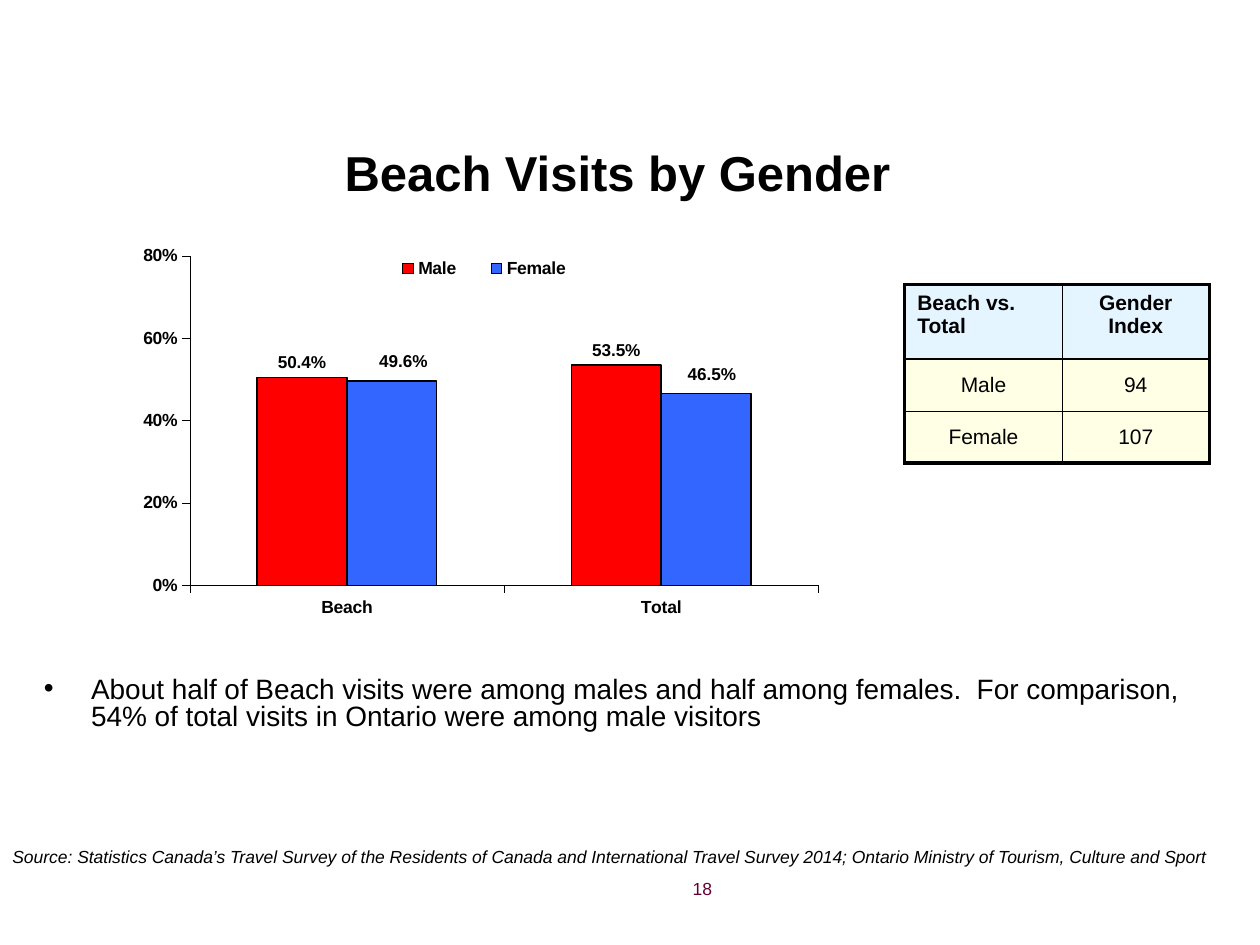
import pptx
import pptx.chart.data
import pptx.dml.color
import pptx.enum.chart
import pptx.enum.text
import pptx.oxml
import pptx.oxml.ns
import pptx.util

Pt = pptx.util.Pt
qn = pptx.oxml.ns.qn
ALIGN = pptx.enum.text.PP_ALIGN
FONT = "Arial"
COLORS = {
    "ink": "000000",
    "number": "660033",
    "male": "FF0000",
    "female": "3366FF",
    "header": "CCECFF",
    "body": "FFFFCC",
}


def rgb(name):
    return pptx.dml.color.RGBColor.from_string(COLORS[name])


def element(tag, **attrs):
    el = pptx.oxml.parse_xml(f"<{tag} {pptx.oxml.ns.nsdecls(tag.split(':')[0])}/>")
    for key, value in attrs.items():
        el.set(key, str(value))
    return el


def child(parent, tag, **attrs):
    el = element(tag, **attrs)
    parent.append(el)
    return el


def style_font(font, size, color="ink", bold=False, italic=False):
    font.name, font.size = FONT, Pt(size)
    font.bold, font.italic = bold, italic
    font.color.rgb = rgb(color)


def add_text(slide, box, text, size, align=ALIGN.LEFT, bullet=False, **style):
    tf = slide.shapes.add_textbox(*map(Pt, box)).text_frame
    tf.word_wrap = True
    p = tf.paragraphs[0]
    p.alignment = align
    if bullet:
        p.line_spacing = 0.8
        pPr = p._p.get_or_add_pPr()
        pPr.set("marL", str(Pt(27)))
        pPr.set("indent", str(Pt(-27)))
        child(pPr, "a:buFont", typeface=FONT)
        child(pPr, "a:buChar", char="•")
    r = p.add_run()
    r.text = text
    style_font(r.font, size, **style)


def manual_layout(**places):
    layout = element("c:layout")
    manual = child(layout, "c:manualLayout")
    for key, value in places.items():
        child(manual, f"c:{key}", val=value)
    return layout


def style_axis(axis):
    axis.has_major_gridlines = False
    axis.major_tick_mark = pptx.enum.chart.XL_TICK_MARK.OUTSIDE
    axis.minor_tick_mark = pptx.enum.chart.XL_TICK_MARK.NONE
    axis.format.line.width = Pt(0.19)
    axis.format.line.color.rgb = rgb("ink")
    style_font(axis.tick_labels.font, 10, bold=True)


def add_gender_chart(slide, box):
    data = pptx.chart.data.CategoryChartData(number_format="0.0%")
    data.categories = ["Beach", "Total"]
    data.add_series("Male", (0.504, 0.535))
    data.add_series("Female", (0.496, 0.465))
    kind = pptx.enum.chart.XL_CHART_TYPE.COLUMN_CLUSTERED
    chart = slide.shapes.add_chart(kind, *map(Pt, box), data).chart
    chart.has_title = False
    style_font(chart.font, 10, bold=True)

    # Axes
    style_axis(chart.category_axis)
    axis = chart.value_axis
    style_axis(axis)
    axis.minimum_scale, axis.maximum_scale, axis.major_unit = 0, 0.8, 0.2
    axis.tick_labels.number_format = "0%"
    axis.tick_labels.number_format_is_linked = False

    # Columns and their labels
    plot = chart.plots[0]
    plot.gap_width, plot.overlap = 150, 0
    plot.vary_by_categories = False
    outside = pptx.enum.chart.XL_LABEL_POSITION.OUTSIDE_END
    for series, color in zip(plot.series, ("male", "female")):
        series.format.fill.solid()
        series.format.fill.fore_color.rgb = rgb(color)
        series.format.line.color.rgb = rgb("ink")
        series.format.line.width = Pt(0.75)
        labels = series.data_labels
        labels.show_value = True
        labels.number_format = "0.0%"
        labels.number_format_is_linked = False
        labels.position = outside
        style_font(labels.font, 9.8, bold=True)

    # Female labels sit a little to the right of their columns
    female = plot.series[1]
    for i in range(2):
        label = female.points[i].data_label
        style_font(label.font, 9.8, bold=True)
        label.position = outside
    shifts = (0.012, 0.006)
    for dLbl, dx in zip(female.data_labels._element.findall(qn("c:dLbl")), shifts):
        dLbl.insert(1, manual_layout(x=dx, y=-0.01))

    # Legend above the columns, and the plot area
    chart.has_legend = True
    legend = chart.legend
    legend.position = pptx.enum.chart.XL_LEGEND_POSITION.RIGHT
    legend.include_in_layout = False
    style_font(legend.font, 10, bold=True)
    legend._element.find(qn("c:legendPos")).addnext(manual_layout(
        xMode="edge", yMode="edge", x=0.29, y=0.05, w=0.23, h=0.06))
    area = chart._chartSpace.find(".//" + qn("c:plotArea"))
    for old in area.findall(qn("c:layout")):
        area.remove(old)
    area.insert(0, manual_layout(layoutTarget="inner", xMode="edge", yMode="edge",
                                 x=0.099, y=0.053, w=0.653, h=0.694))


def set_borders(cell, widths):
    tcPr = cell._tc.get_or_add_tcPr()
    for i, (side, width) in enumerate(zip("LRTB", widths)):
        ln = element(f"a:ln{side}", w=Pt(width))
        child(child(ln, "a:solidFill"), "a:srgbClr", val=COLORS["ink"])
        tcPr.insert(i, ln)


def add_index_table(slide, box):
    rows = [("Beach vs. Total", "Gender Index"), ("Male", "94"), ("Female", "107")]
    table = slide.shapes.add_table(3, 2, *map(Pt, box)).table
    table.first_row = table.horz_banding = False
    for col, width in zip(table.columns, (90, 84)):
        col.width = Pt(width)
    for row, height in zip(table.rows, (42.5, 30, 29.5)):
        row.height = Pt(height)
    for i, row in enumerate(rows):
        for j, text in enumerate(row):
            cell = table.cell(i, j)
            header = i == 0
            if not header:
                cell.vertical_anchor = pptx.enum.text.MSO_ANCHOR.MIDDLE
                cell.margin_left = cell.margin_right = 0
                cell.margin_top = cell.margin_bottom = 0
            p = cell.text_frame.paragraphs[0]
            p.alignment = ALIGN.LEFT if header and j == 0 else ALIGN.CENTER
            r = p.add_run()
            r.text = text
            style_font(r.font, 12, bold=header)
            cell.fill.solid()
            cell.fill.fore_color.rgb = rgb("header" if header else "body")
            clr = cell._tc.tcPr.find(".//" + qn("a:srgbClr"))
            child(clr, "a:alpha", val=50000)
            edges = (j == 0, j == 1, i == 0, i == 2)
            set_borders(cell, [2.25 if edge else 1 for edge in edges])


def build_slide(prs):
    s = prs.slides.add_slide(prs.slide_layouts[6])
    # Title
    add_text(s, (28.8, 77.8, 648, 54), "Beach Visits by Gender", 28,
             ALIGN.CENTER, bold=True)
    # Index table
    add_index_table(s, (517, 162.7, 174, 102))
    # Finding
    add_text(s, (18, 383.8, 684, 103),
             "About half of Beach visits were among males and half among females.  "
             "For comparison, 54% of total visits in Ontario were among male visitors",
             16, bullet=True)
    # Page number
    add_text(s, (365.8, 498.2, 48.2, 25.2), "18", 10, ALIGN.RIGHT, color="number")
    # Chart
    add_gender_chart(s, (54, 131.8, 550, 271.4))
    # Source line
    add_text(s, (0, 480.2, 705.6, 19.4),
             "Source: Statistics Canada’s Travel Survey of the Residents of Canada and "
             "International Travel Survey 2014; Ontario Ministry of Tourism, Culture "
             "and Sport", 10, italic=True)


def main():
    prs = pptx.Presentation()
    prs.slide_width, prs.slide_height = Pt(720), Pt(540)
    build_slide(prs)
    prs.save("out.pptx")


if __name__ == "__main__":
    main()
